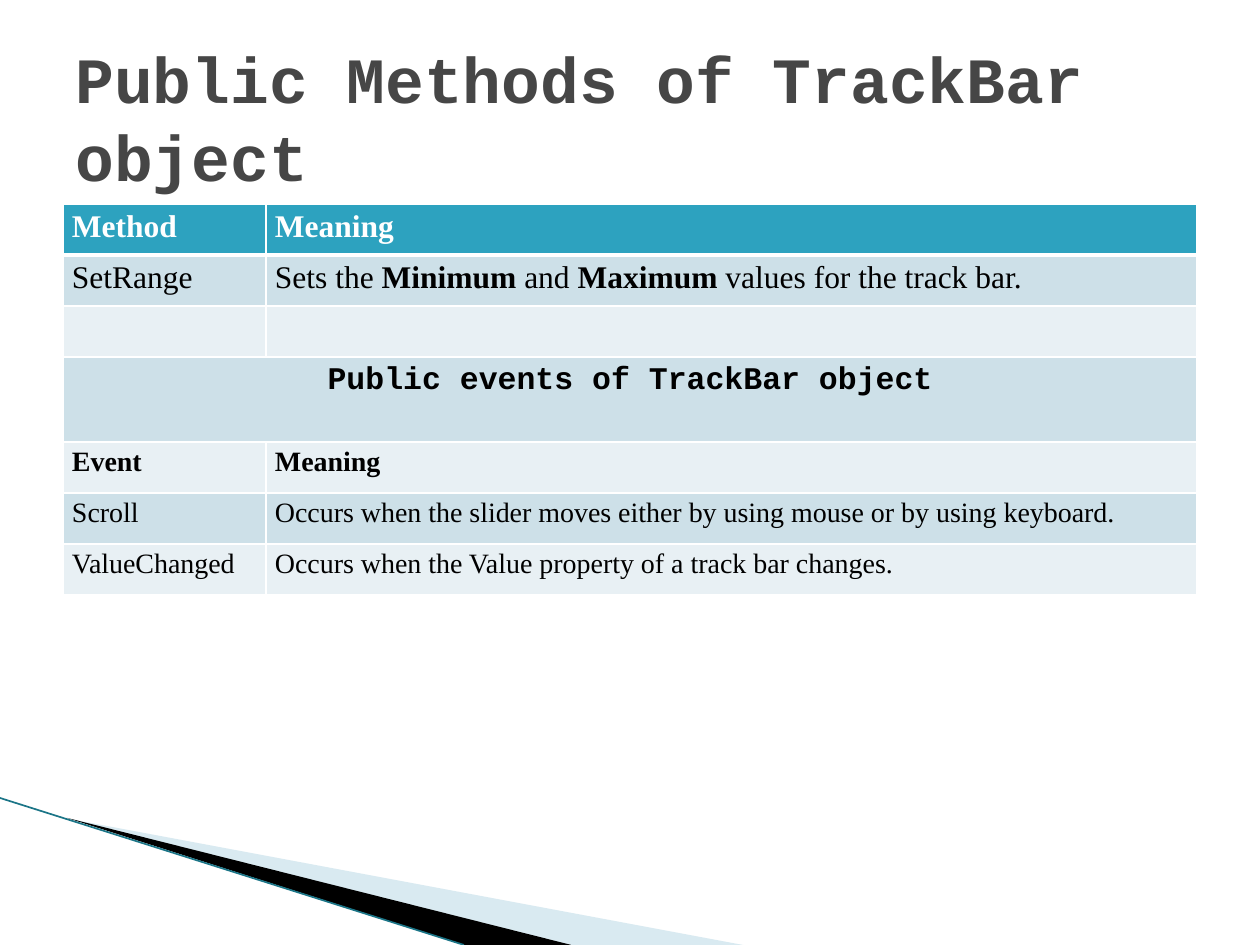
from lxml import etree
from pptx import Presentation
from pptx.dml.color import RGBColor
from pptx.enum.shapes import MSO_CONNECTOR
from pptx.enum.text import MSO_ANCHOR, PP_ALIGN
from pptx.oxml.ns import qn
from pptx.util import Pt

PX = 914400 // 126
STRAIGHT = MSO_CONNECTOR.STRAIGHT
TOP = MSO_ANCHOR.TOP
CENTER, JUSTIFY = PP_ALIGN.CENTER, PP_ALIGN.JUSTIFY
SERIF, MONO = "Times New Roman", "Courier New"
COLORS = {
    "title": "464646",
    "header": "2DA2BF",
    "dark band": "CDE0E8",
    "light band": "E8F0F4",
    "white": "FFFFFF",
    "black": "000000",
    "pale wedge": "A0CBDC",
    "edge": "1B7587",
}


def rgb(name):
    return RGBColor.from_string(COLORS[name])


def add_border(cell, side, points):
    line = etree.SubElement(cell._tc.get_or_add_tcPr(), qn(f"a:ln{side}"), w=str(Pt(points)))
    fill = etree.SubElement(line, qn("a:solidFill"))
    etree.SubElement(fill, qn("a:srgbClr"), val=COLORS["white"])


prs = Presentation()
prs.slide_width, prs.slide_height = 1260 * PX, 945 * PX
slide = prs.slides.add_slide(prs.slide_layouts[6])

# Corner decoration: color, opacity, frame, corners; the outlines reach beyond their frames
wedges = [
    ("pale wedge", 40, (98, 689, 524, 199), [(69, 819), (743, 945), (571, 945)]),
    ("black", 100, (-8, 798, 524, 116), [(67, 818), (571, 945), (464, 945)]),
]
for color, opacity, frame, corners in wedges:
    left, top, width, height = (length * PX for length in frame)
    builder = slide.shapes.build_freeform(*corners[0], scale=PX)
    builder.add_line_segments(corners[1:], close=True)
    wedge = builder.convert_to_shape()
    outline = wedge._element.spPr.find(".//" + qn("a:path"))
    outline.set("w", str(width))
    outline.set("h", str(height))
    for point, (x, y) in zip(outline.iter(qn("a:pt")), corners):
        point.set("x", str(x * PX - left))
        point.set("y", str(y * PX - top))
    wedge.left, wedge.top, wedge.width, wedge.height = left, top, width, height
    wedge.shadow.inherit = False
    wedge.fill.solid()
    wedge.fill.fore_color.rgb = rgb(color)
    wedge.line.fill.background()
    if opacity < 100:
        tint = wedge._element.spPr.find(".//" + qn("a:srgbClr"))
        etree.SubElement(tint, qn("a:alpha"), val=str(opacity * 1000))

edge = slide.shapes.add_connector(STRAIGHT, 0, 798 * PX, 464 * PX, 945 * PX)
edge.line.color.rgb = rgb("edge")
edge.line.width = Pt(0.95)
etree.SubElement(edge._element.spPr, qn("a:effectLst"))

# Methods and events table: size, font, bold, then the cells as lists of text pieces;
# every second piece of a cell has the opposite weight
rows = [
    (18, SERIF, True, [["Method"], ["Meaning"]]),
    (18, SERIF, False, [["SetRange"], ["Sets the ", "Minimum", " and ", "Maximum",
                                       " values for the track bar."]]),
    (18, SERIF, False, [[], []]),
    (18, MONO, True, [["Public events of TrackBar object"]]),
    (16, SERIF, True, [["Event"], ["Meaning"]]),
    (16, SERIF, False, [["Scroll"], [
        "Occurs when the slider moves either by using mouse or by using keyboard."]]),
    (16, SERIF, False, [["ValueChanged"], [
        "Occurs when the Value property of a track bar changes."]]),
]
ROW_HEIGHT, HEADING_HEIGHT = 51, 85
table_height = ROW_HEIGHT * (len(rows) - 1) + HEADING_HEIGHT
table = slide.shapes.add_table(len(rows), 2, 63 * PX, 204 * PX, 1134 * PX, table_height * PX).table
table.columns[0].width, table.columns[1].width = 203 * PX, 931 * PX

for row_index, (size, font, bold, cells) in enumerate(rows):
    is_heading = len(cells) == 1
    table.rows[row_index].height = (HEADING_HEIGHT if is_heading else ROW_HEIGHT) * PX
    if is_heading:
        table.cell(row_index, 0).merge(table.cell(row_index, 1))
    band = "header" if row_index == 0 else ("light band", "dark band")[row_index % 2]
    for column in range(2):
        cell = table.cell(row_index, column)
        for side in "LRTB":
            is_header_rule = (row_index, side) in ((0, "B"), (1, "T"))
            add_border(cell, side, 3 if is_header_rule else 1)
        cell.fill.solid()
        cell.fill.fore_color.rgb = rgb(band)
    for column, pieces in enumerate(cells):
        cell = table.cell(row_index, column)
        paragraph = cell.text_frame.paragraphs[0]
        paragraph.font.size = Pt(size)
        if is_heading:
            paragraph.alignment = CENTER
        else:
            cell.margin_left = cell.margin_right = 9 * PX
            cell.margin_top = cell.margin_bottom = 0
            paragraph.alignment = JUSTIFY
            paragraph.line_spacing = 1.15
        for piece_index, piece in enumerate(pieces):
            run = paragraph.add_run()
            run.text = piece
            run.font.size = Pt(size)
            run.font.name = font
            run.font.bold = bold != (piece_index % 2 == 1)
            run.font.color.rgb = rgb("white" if row_index == 0 else "black")

# Title
title = slide.shapes.add_textbox(63 * PX, 38 * PX, 1134 * PX, 158 * PX).text_frame
title.word_wrap = True
title.vertical_anchor = TOP
title.margin_top, title.margin_bottom = 1 * PX, 0
title.text = "Public Methods of TrackBar object"
heading = title.paragraphs[0]
heading.line_spacing = Pt(44.5)
heading.font.size = Pt(36.9)
heading.font.name = MONO
heading.font.bold = True
heading.font.color.rgb = rgb("title")

prs.save("out.pptx")
